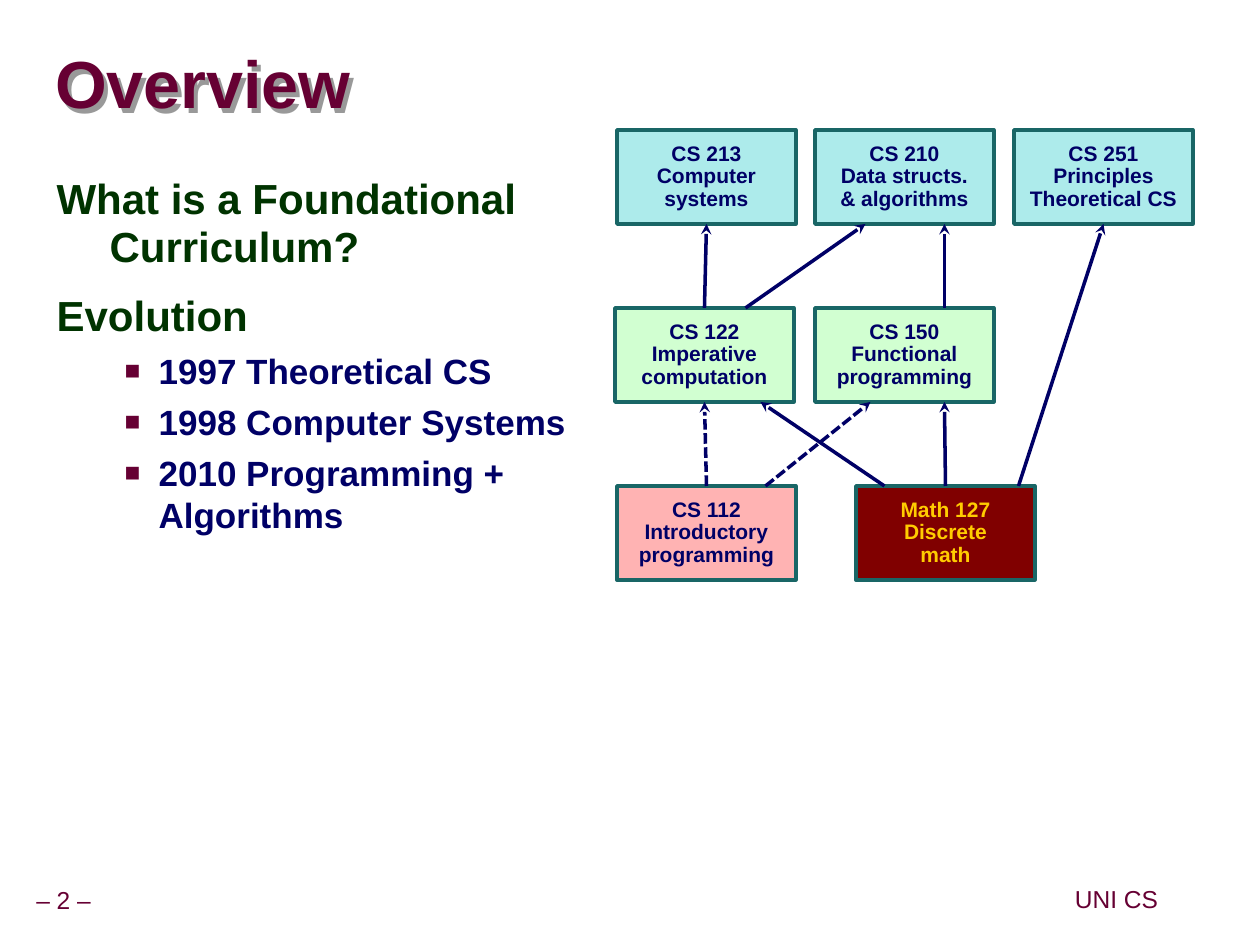
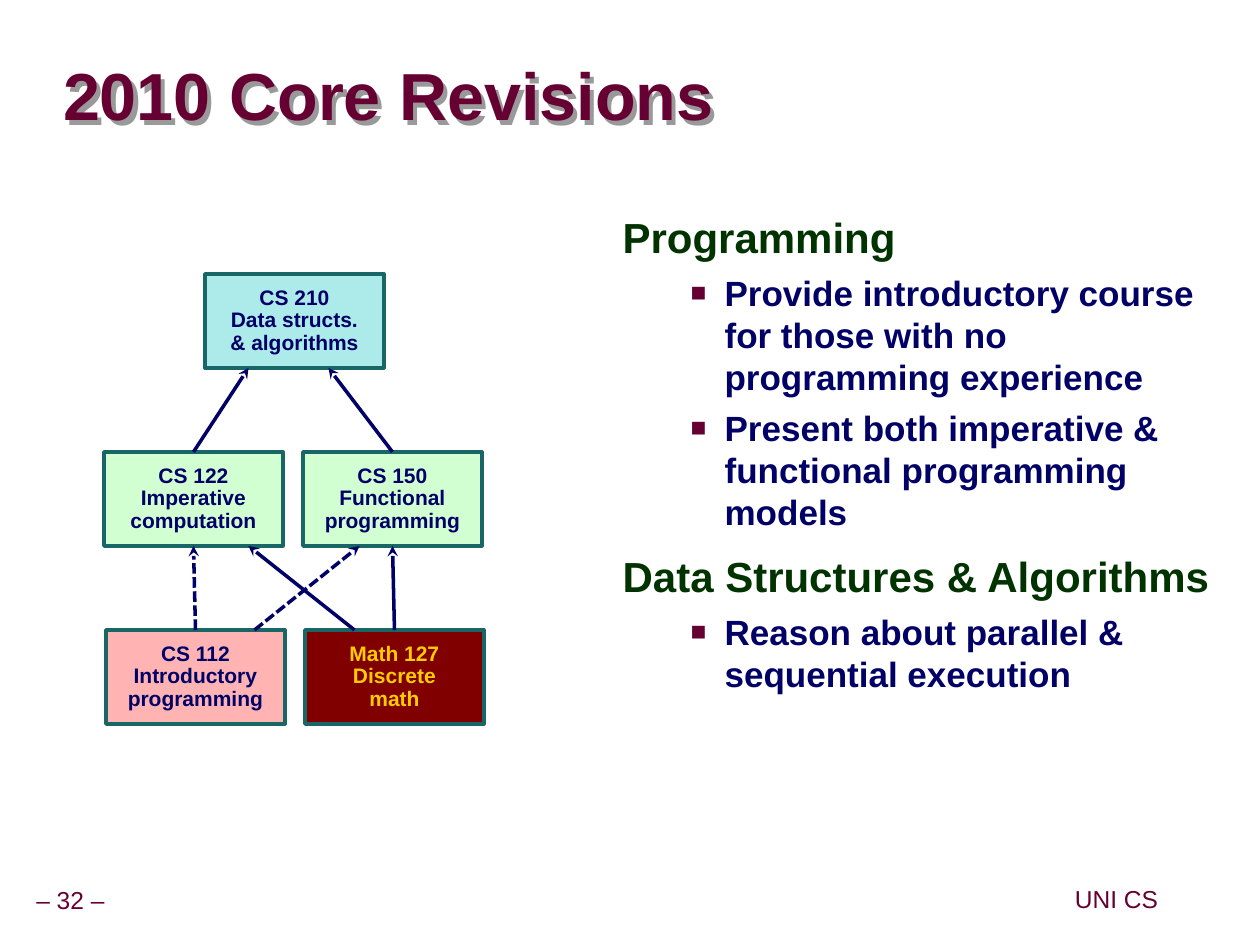
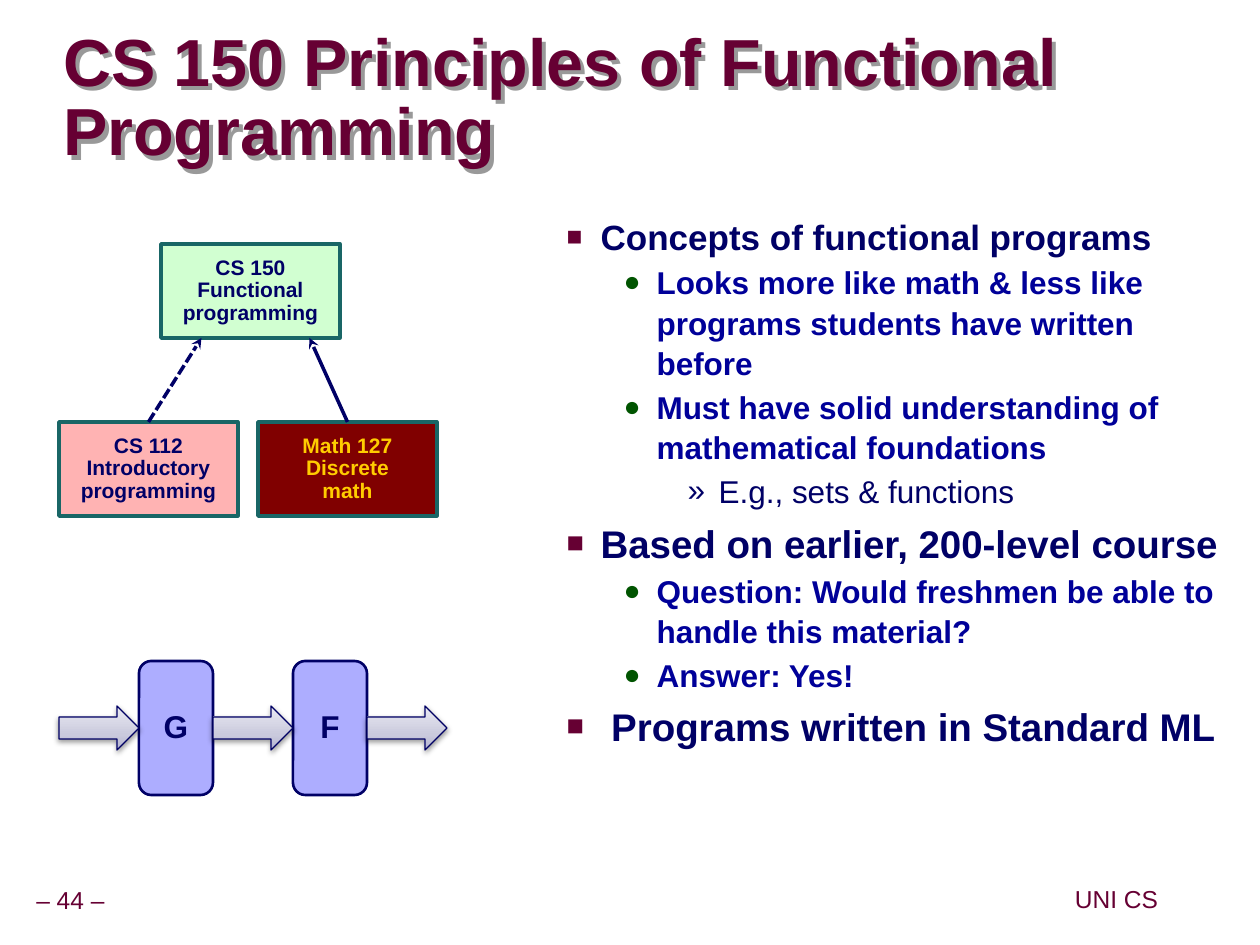
from dataclasses import dataclass

from lxml.etree import SubElement
from pptx import Presentation
from pptx.dml.color import RGBColor
from pptx.enum.dml import MSO_LINE
from pptx.enum.shapes import MSO_CONNECTOR, MSO_SHAPE
from pptx.enum.text import MSO_ANCHOR, MSO_AUTO_SIZE, PP_ALIGN
from pptx.oxml.ns import qn
from pptx.util import Emu, Inches, Pt


@dataclass(frozen=True)
class Theme:
    font: str = "Arial"
    maroon: str = "660033"
    navy: str = "000066"
    border: str = "196666"
    title_shadow: str = "999999"
    upper: str = "ADEBEB"
    middle: str = "D1FFD1"
    intro: str = "FFB3B3"
    math: str = "800000"
    gold: str = "FFCC00"
    stage: str = "ADADFF"
    arrow_line: str = "000064"
    title_size: int = 38
    course_size: int = 12
    stage_size: int = 18
    footer_size: int = 14


T = Theme()
ARROW_STOPS = [(0, "B3B3D0"), (35, "CACADD"), (100, "EBEBF3")]

# size, colour, bold, left and hanging indent in px, line spacing, space before, bullet
LEVELS = [
    dict(size=24, color="003300", bold=True, left=53, hang=53, spacing=0.95, before=0.5, bullet=None),
    dict(size=20, color=T.navy, bold=True, left=102, hang=34, spacing=1.0, before=0.25, bullet=("■", T.maroon, 75)),
    dict(size=18, color="000099", bold=True, left=158, hang=33, spacing=1.07, before=0.1, bullet=("●", "005400", 90)),
    dict(size=18, color=T.navy, bold=False, left=220, hang=31, spacing=1.0, before=0.2, bullet=("»", T.navy, 100)),
]

COURSES = {
    "213": (["CS 213", "Computer systems"], T.upper, T.navy),
    "210": (["CS 210", "Data structs.", "& algorithms"], T.upper, T.navy),
    "251": (["CS 251", "Principles", "Theoretical CS"], T.upper, T.navy),
    "122": (["CS 122", "Imperative", "computation"], T.middle, T.navy),
    "150": (["CS 150", "Functional", "programming"], T.middle, T.navy),
    "112": (["CS 112", "Introductory", "programming"], T.intro, T.navy),
    "127": (["Math 127", "Discrete", "math"], T.math, T.gold),
}
COURSE_W, COURSE_H, ROW_PITCH = 179, 94, 178
FOOTER = "UNI CS"
TITLE_BOX = (63, 53, 1124, 94)

# rows: {course: left}; edges: (from, to, start offset, end offset) from the side middles
SLIDES = [
    dict(
        number=2, title="Overview", title_box=(55, 34, 1201, 107), body_box=(44, 170, 541, 445),
        body=[(0, "What is a Foundational Curriculum?"), (0, "Evolution"), (1, "1997 Theoretical CS"),
              (1, "1998 Computer Systems"), (1, "2010 Programming + Algorithms")],
        top=130,
        rows=[{"213": 617, "210": 815, "251": 1014}, {"122": 615, "150": 815}, {"112": 617, "127": 856}],
        edges=[("122", "213", 0, 0), ("122", "210", 41, -39), ("150", "210", 40, 40),
               ("112", "122", 0, 0), ("112", "150", 59, -34), ("127", "122", -61, 56),
               ("127", "150", 0, 40), ("127", "251", 73, 0)],
    ),
    dict(
        number=32, title="2010 Core Revisions", title_box=TITLE_BOX, body_box=(610, 209, 630, 609),
        body=[(0, "Programming"),
              (1, "Provide introductory course for those with no programming experience"),
              (1, "Present both imperative & functional programming models"),
              (0, "Data Structures & Algorithms"),
              (1, "Reason about parallel & sequential execution")],
        top=274,
        rows=[{"210": 205}, {"122": 104, "150": 303}, {"112": 106, "127": 305}],
        edges=[("122", "210", 0, -46), ("150", "210", 0, 34), ("112", "122", 0, 0),
               ("112", "150", 59, -33), ("127", "122", -40, 55), ("127", "150", 0, 0)],
    ),
    dict(
        number=44, title="CS 150 Principles of Functional Programming", title_box=TITLE_BOX,
        body_box=(486, 209, 754, 609),
        body=[(1, "Concepts of functional programs"),
              (2, "Looks more like math & less like programs students have written before"),
              (2, "Must have solid understanding of mathematical foundations"),
              (3, "E.g., sets & functions"),
              (1, "Based on earlier, 200-level course", 22),
              (2, "Question: Would freshmen be able to handle this material?"),
              (2, "Answer: Yes!"),
              (1, " Programs written in Standard ML", 22)],
        top=244,
        rows=[{"150": 161}, {"112": 59, "127": 258}],
        edges=[("112", "150", 0, -49), ("127", "150", 0, 59)],
        stages=["G", "F"],
    ),
]


def px(n):
    return Emu(round(n * 914400 / 126))


def rgb(color):
    return RGBColor.from_string(color)


def place(sp, box):
    sp.left, sp.top, sp.width, sp.height = map(px, box)


def add_run(p, text, size, color, bold):
    r = p.add_run()
    r.text = text
    r.font.name, r.font.size, r.font.bold = T.font, Pt(size), bold
    r.font.color.rgb = rgb(color)


def set_frame(tf, inset, anchor, wrap=True):
    tf.auto_size = MSO_AUTO_SIZE.NONE
    tf.word_wrap = wrap
    tf.vertical_anchor = anchor
    tf.margin_left = tf.margin_right = Inches(inset[0])
    tf.margin_top = tf.margin_bottom = Inches(inset[1])


def add_paragraph(tf, index):
    return tf.paragraphs[0] if index == 0 else tf.add_paragraph()


def add_centred(tf, lines, size, color, bold):
    for i, line in enumerate(lines):
        p = add_paragraph(tf, i)
        p.alignment, p.line_spacing = PP_ALIGN.CENTER, 0.9
        add_run(p, line, size, color, bold)


def add_shadow(sp, color, blur, dist, angle, opacity):
    sp.shadow.inherit = False
    effects = sp._element.spPr.find(qn("a:effectLst"))
    shadow = SubElement(effects, qn("a:outerShdw"), blurRad=str(Pt(blur)), dist=str(Pt(dist)),
                        dir=str(angle * 60000), algn="ctr", rotWithShape="0")
    clr = SubElement(shadow, qn("a:srgbClr"), val=color)
    SubElement(clr, qn("a:alpha"), val=str(opacity * 1000))


def add_title(s, text, box):
    sp = s.shapes.title
    place(sp, box)
    add_shadow(sp, T.title_shadow, 0, 3.6, 50, 100)
    tf = sp.text_frame
    set_frame(tf, (0, 0), MSO_ANCHOR.MIDDLE)
    p = tf.paragraphs[0]
    p.alignment, p.line_spacing = PP_ALIGN.LEFT, 0.87
    add_run(p, text, T.title_size, T.maroon, True)


def set_bullet(p, level):
    pPr = p._p.get_or_add_pPr()
    pPr.set("marL", str(px(level["left"])))
    pPr.set("indent", str(-px(level["hang"])))
    if level["bullet"] is None:
        SubElement(pPr, qn("a:buNone"))
        return
    char, color, percent = level["bullet"]
    SubElement(SubElement(pPr, qn("a:buClr")), qn("a:srgbClr"), val=color)
    SubElement(pPr, qn("a:buSzPct"), val=str(percent * 1000))
    SubElement(pPr, qn("a:buFont"), typeface=T.font)
    SubElement(pPr, qn("a:buChar"), char=char)


def add_body(s, items, box):
    sp = s.placeholders[1]
    place(sp, box)
    tf = sp.text_frame
    set_frame(tf, (0.1, 0.05), MSO_ANCHOR.TOP)
    for i, (depth, text, *custom) in enumerate(items):
        level = LEVELS[depth]
        size = custom[0] if custom else level["size"]
        p = add_paragraph(tf, i)
        p.level, p.alignment = depth, PP_ALIGN.LEFT
        p.line_spacing = level["spacing"]
        p.space_before, p.space_after = Pt(size * level["before"]), Pt(0)
        set_bullet(p, level)
        add_run(p, text, size, level["color"], level["bold"])


def add_footer(s, number):
    for text, box in [(f"– {number} –", (30, 882, 83, 39)), (FOOTER, (1061, 881, 111, 40))]:
        sp = s.shapes.add_textbox(*map(px, box))
        set_frame(sp.text_frame, (0.05, 0.05), MSO_ANCHOR.MIDDLE, wrap=False)
        add_centred(sp.text_frame, [text], T.footer_size, T.maroon, False)
        if text != FOOTER:
            sp.text_frame.paragraphs[0].alignment = PP_ALIGN.LEFT


def add_box(s, kind, box, fill, line, width):
    sp = s.shapes.add_shape(kind, *map(px, box))
    sp.shadow.inherit = False
    sp.fill.solid()
    sp.fill.fore_color.rgb = rgb(fill)
    sp.line.color.rgb, sp.line.width = rgb(line), Pt(width)
    return sp


def add_edge(s, src, dst, start, end, dashed):
    x1, x2 = src.left + src.width // 2 + px(start), dst.left + dst.width // 2 + px(end)
    cn = s.shapes.add_connector(MSO_CONNECTOR.STRAIGHT, x1, src.top, x2, dst.top + dst.height)
    if start == 0:
        cn.begin_connect(src, 0)
    if end == 0:
        cn.end_connect(dst, 2)
    cn.line.color.rgb, cn.line.width = rgb(T.navy), Pt(2)
    if dashed:
        cn.line.dash_style = MSO_LINE.SQUARE_DOT
    SubElement(cn.line._get_or_add_ln(), qn("a:tailEnd"), type="stealth")
    SubElement(cn._element.spPr, qn("a:effectLst"))


def add_courses(s, top, rows, edges):
    nodes = {}
    for i, row in enumerate(rows):
        for key, left in row.items():
            lines, fill, color = COURSES[key]
            box = (left, top + i * ROW_PITCH, COURSE_W, COURSE_H)
            sp = nodes[key] = add_box(s, MSO_SHAPE.RECTANGLE, box, fill, T.border, 2)
            set_frame(sp.text_frame, (0.1, 0.05), MSO_ANCHOR.MIDDLE)
            add_centred(sp.text_frame, lines, T.course_size, color, True)
    for src, dst, start, end in edges:
        add_edge(s, nodes[src], nodes[dst], start, end, dashed=src == "112")


def add_flow_arrow(s, box):
    sp = add_box(s, MSO_SHAPE.RIGHT_ARROW, box, ARROW_STOPS[0][1], T.arrow_line, 0.75)
    sp.fill.gradient()
    sp.fill.gradient_angle = 90
    stops = sp._element.spPr.find(".//" + qn("a:gsLst"))
    for gs in list(stops):
        stops.remove(gs)
    for pos, color in ARROW_STOPS:
        gs = SubElement(stops, qn("a:gs"), pos=str(pos * 1000))
        SubElement(gs, qn("a:srgbClr"), val=color)
    add_shadow(sp, "000000", 3.1, 1.6, 90, 38)


def add_pipeline(s, stages):
    left, middle, arrow_w, arrow_h, stage_w, stage_h = 59, 728, 80, 44, 74, 134
    pitch = arrow_w + stage_w
    for i, name in enumerate(stages):
        box = (left + arrow_w + i * pitch, middle - stage_h // 2, stage_w, stage_h)
        sp = add_box(s, MSO_SHAPE.ROUNDED_RECTANGLE, box, T.stage, T.navy, 1.5)
        set_frame(sp.text_frame, (0.05, 0.05), MSO_ANCHOR.MIDDLE, wrap=False)
        add_centred(sp.text_frame, [name], T.stage_size, T.navy, True)
    for i in range(len(stages) + 1):
        add_flow_arrow(s, (left + i * pitch, middle - arrow_h // 2, arrow_w, arrow_h))


def main():
    prs = Presentation()
    prs.slide_width, prs.slide_height = px(1260), px(945)
    for data in SLIDES:
        s = prs.slides.add_slide(prs.slide_layouts[1])
        add_footer(s, data["number"])
        add_title(s, data["title"], data["title_box"])
        add_body(s, data["body"], data["body_box"])
        add_courses(s, data["top"], data["rows"], data["edges"])
        if "stages" in data:
            add_pipeline(s, data["stages"])
    prs.save("out.pptx")


if __name__ == "__main__":
    main()
